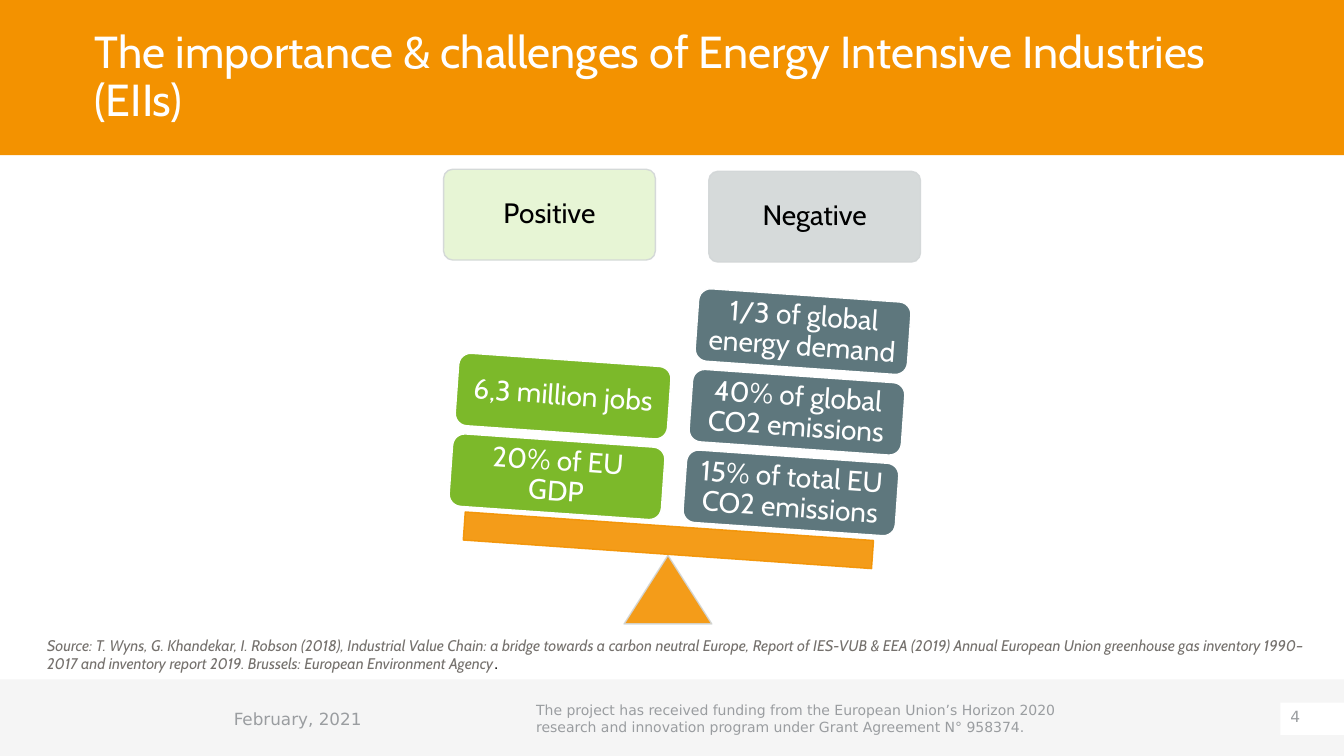
"""Builds the slide weighing the benefits and burdens of energy intensive industries."""
from lxml import etree
from pptx import Presentation
from pptx.dml.color import RGBColor
from pptx.enum.shapes import MSO_SHAPE
from pptx.enum.text import MSO_ANCHOR, PP_ALIGN
from pptx.oxml.ns import qn
from pptx.util import Inches, Pt

RECT = MSO_SHAPE.RECTANGLE
ROUNDED = MSO_SHAPE.ROUNDED_RECTANGLE
TRIANGLE = MSO_SHAPE.ISOSCELES_TRIANGLE
TOP, MIDDLE = MSO_ANCHOR.TOP, MSO_ANCHOR.MIDDLE
LEFT, CENTER = PP_ALIGN.LEFT, PP_ALIGN.CENTER

ORANGE, GREEN, SLATE = "F39200", "7CB92A", "5E777D"
WHITE, BLACK, SILVER, GREY = "FFFFFF", "000000", "D2D6D7", "9A9DA0"
TILT = 4

prs = Presentation()
prs.slide_width, prs.slide_height = Inches(13.33), Inches(7.5)
slide = prs.slides.add_slide(prs.slide_layouts[6])


def add_block(kind, box, fill, line=None, alpha=None, tilt=0):
    block = slide.shapes.add_shape(kind, *map(Inches, box))
    block.shadow.inherit = False
    block.rotation = tilt
    paints = [block.fill]
    if line:
        block.line.width = Pt(1)
        paints.append(block.line.fill)
    else:
        block.line.fill.background()
    for paint, color in zip(paints, (fill, line)):
        paint.solid()
        paint.fore_color.rgb = RGBColor.from_string(color)
    if alpha:
        for color in block._element.spPr.iter(qn("a:srgbClr")):
            etree.SubElement(color, qn("a:alpha")).set("val", str(alpha * 1000))
    return block


def write(shape, text, size, color, font="Cabin", align=LEFT, anchor=TOP, spacing=1.0):
    frame = shape.text_frame
    frame.word_wrap = True
    frame.vertical_anchor = anchor
    paragraph = frame.paragraphs[0]
    paragraph.text = text
    paragraph.alignment = align
    paragraph.line_spacing = spacing
    paragraph.font.size = Pt(size)
    paragraph.font.name = font
    paragraph.font.color.rgb = RGBColor.from_string(color)
    return paragraph


add_block(RECT, (0, -0.03, 13.33, 1.57), ORANGE)
add_block(RECT, (0, 6.74, 13.33, 0.76), "F5F5F5")

title = slide.shapes.add_textbox(Inches(0.84), Inches(0.03), Inches(11.58), Inches(1.49))
write(title, "The importance & challenges of Energy Intensive Industries (EIIs)",
      32, WHITE, anchor=MIDDLE, spacing=0.9)

date = slide.shapes.add_textbox(Inches(2.22), Inches(7), Inches(2.65), Inches(0.3))
write(date, "February, 2021", 12, GREY, "DejaVu Sans", spacing=0.9)

funding = slide.shapes.add_textbox(Inches(5.22), Inches(6.91), Inches(5.63), Inches(0.5))
write(funding, "The project has received funding from the European Union’s Horizon 2020 "
      "research and innovation program under Grant Agreement N° 958374.",
      10, GREY, "DejaVu Sans")

page_number = add_block(RECT, (12.7, 6.97, 0.63, 0.32), WHITE)
write(page_number, "4", 11, GREY, "DejaVu Sans")

for label, left, top, fill in (("Positive", 4.4, 1.68, "E5F5D1"),
                               ("Negative", 7.03, 1.7, SILVER)):
    heading = add_block(ROUNDED, (left, top, 2.1, 0.9), fill, SILVER, alpha=90)
    heading.adjustments[0] = 0.1
    write(heading, label, 20, BLACK, align=CENTER, anchor=MIDDLE, spacing=0.9)

add_block(TRIANGLE, (6.19, 5.51, 0.87, 0.68), ORANGE, SILVER, alpha=90)
add_block(RECT, (4.6, 5.22, 4.06, 0.28), ORANGE, ORANGE, alpha=90, tilt=TILT)

stacks = (
    (6.79, 4.53, SLATE, ("15% of total EU CO2 emissions",
                         "40% of global CO2 emissions",
                         "1/3 of global energy demand")),
    (4.47, 4.37, GREEN, ("20% of EU GDP", "6,3 million jobs")),
)
for left, bottom_top, fill, facts in stacks:
    for level, fact in enumerate(facts):
        box = (left + 0.06 * level, bottom_top - 0.8 * level, 2.11, 0.72)
        weight = add_block(ROUNDED, box, fill, WHITE, tilt=TILT)
        write(weight, fact, 20, WHITE, align=CENTER, anchor=MIDDLE, spacing=0.9)
        frame = weight.text_frame
        frame.margin_left = frame.margin_right = Inches(0.08)
        frame.margin_top = frame.margin_bottom = Inches(0.08)

source = slide.shapes.add_textbox(Inches(0.37), Inches(6.26), Inches(12.76), Inches(0.47))
citation = write(
    source, "Source: T. Wyns, G. Khandekar, I. Robson (2018), Industrial Value Chain: a bridge "
    "towards a carbon neutral Europe, Report of IES-VUB & EEA (2019) Annual European Union "
    "greenhouse gas inventory 1990–2017 and inventory report 2019. Brussels: European "
    "Environment Agency", 11, "75716D")
citation.runs[0].font.italic = True
full_stop = citation.add_run()
full_stop.text = "."
full_stop.font.name = "Arial"
full_stop.font.color.rgb = RGBColor.from_string(BLACK)

prs.save("out.pptx")
